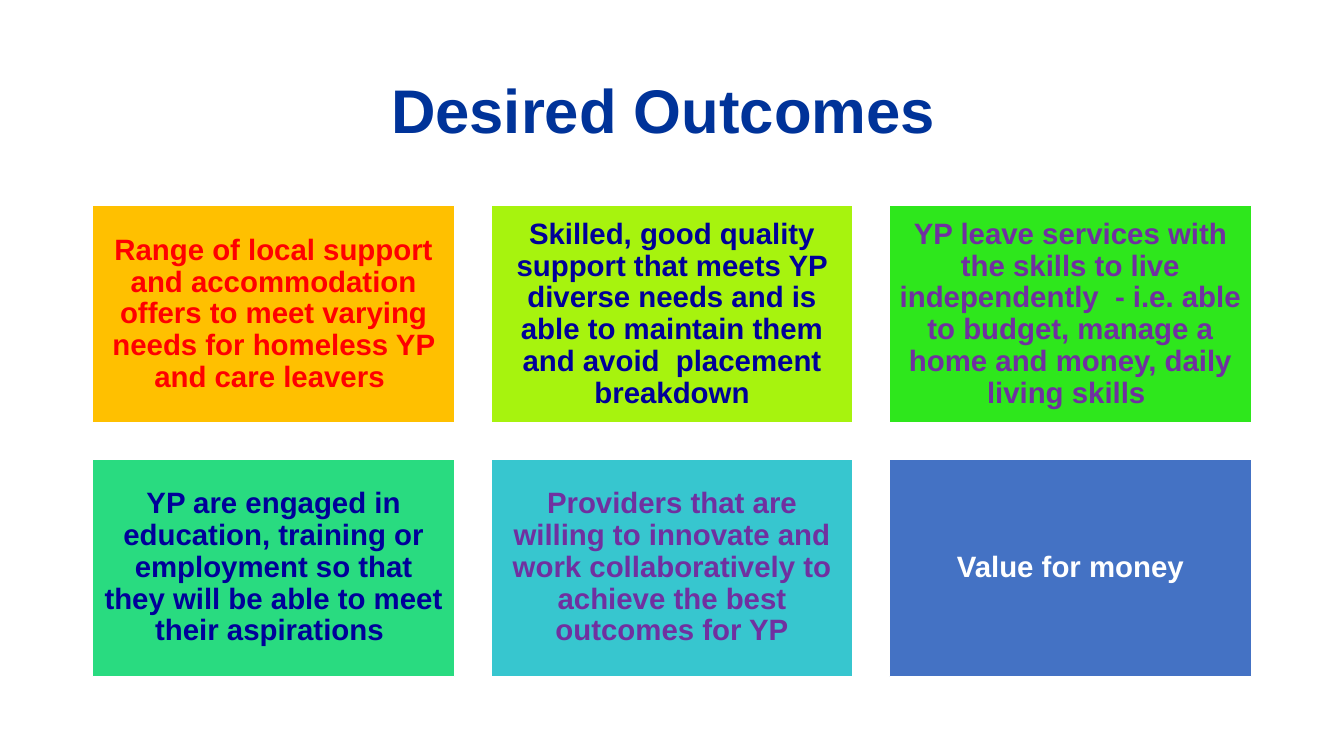
import pptx
import pptx.dml.color
import pptx.enum.shapes
import pptx.enum.text
import pptx.util
from dataclasses import dataclass

Cm = pptx.util.Cm
rgb = pptx.dml.color.RGBColor.from_string


@dataclass(frozen=True)
class Theme:
    font: str = "Arial"
    head: int = 44
    body: int = 21
    title: str = "003399"
    white: str = "FFFFFF"
    red: str = "FF0000"
    navy: str = "000099"
    purple: str = "7030A0"
    amber: str = "FFC000"
    lime: str = "A7F30E"
    green: str = "2EE71C"
    mint: str = "29DB80"
    teal: str = "37C6CF"
    blue: str = "4472C4"


theme = Theme()


def write(shape, text, size, color):
    """Fill a shape with one bold, centred paragraph."""
    frame = shape.text_frame
    frame.word_wrap = True
    frame.vertical_anchor = pptx.enum.text.MSO_ANCHOR.MIDDLE
    para = frame.paragraphs[0]
    para.text = text
    para.alignment = pptx.enum.text.PP_ALIGN.CENTER
    para.line_spacing = 0.9
    para.font.name = theme.font
    para.font.size = pptx.util.Pt(size)
    para.font.bold = True
    para.font.color.rgb = rgb(color)


deck = pptx.Presentation()
deck.slide_width = Cm(33.87)
deck.slide_height = Cm(19.05)
slide = deck.slides.add_slide(deck.slide_layouts[6])

left = 2.33
title = slide.shapes.add_textbox(Cm(left), Cm(1.01), Cm(29.21), Cm(3.68))
write(title, "Desired Outcomes ", theme.head, theme.title)

# Outcome cards: three columns, with the same gap both ways
cards = [
    ("Range of local support and accommodation offers to meet varying needs "
     "for homeless YP and care leavers ", theme.amber, theme.red),
    ("Skilled, good quality support that meets YP diverse needs and is able "
     "to maintain them and avoid  placement breakdown", theme.lime, theme.navy),
    ("YP leave services with the skills to live independently  - i.e. able to "
     "budget, manage a home and money, daily living skills ",
     theme.green, theme.purple),
    ("YP are engaged in education, training or employment so that they will "
     "be able to meet their aspirations ", theme.mint, theme.navy),
    ("Providers that are willing to innovate and work collaboratively to "
     "achieve the best outcomes for YP", theme.teal, theme.purple),
    ("Value for money", theme.blue, theme.white),
]
top, wide, high, gap = 5.18, 9.13, 5.48, 0.91

for i, (text, fill, ink) in enumerate(cards):
    row, col = divmod(i, 3)
    card = slide.shapes.add_shape(
        pptx.enum.shapes.MSO_SHAPE.RECTANGLE,
        Cm(left + col * (wide + gap)), Cm(top + row * (high + gap)),
        Cm(wide), Cm(high))
    card.shadow.inherit = False
    card.fill.solid()
    card.fill.fore_color.rgb = rgb(fill)
    card.line.color.rgb = rgb(theme.white)
    card.line.width = pptx.util.Pt(1)
    frame = card.text_frame
    frame.margin_left = frame.margin_right = Cm(0.22)
    frame.margin_top = frame.margin_bottom = Cm(0.22)
    write(card, text, theme.body, ink)

deck.save("out.pptx")
